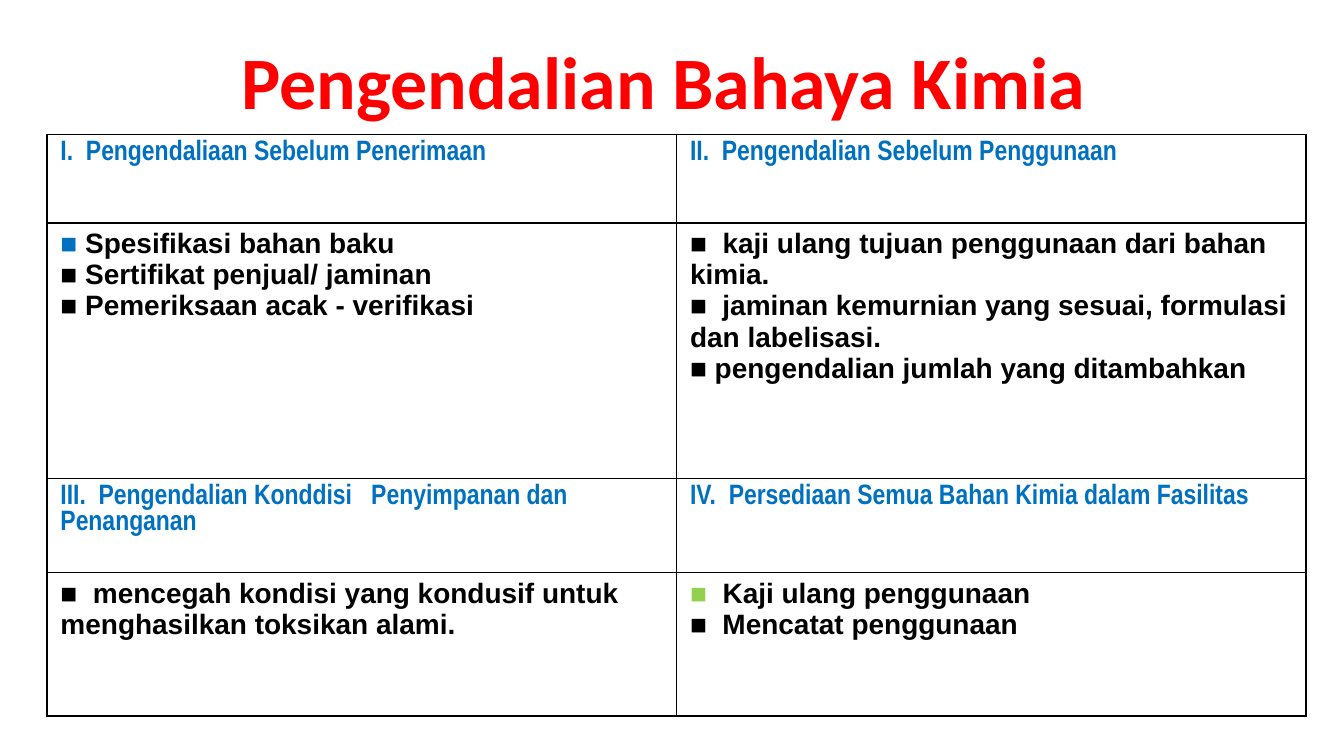
from lxml import etree
from pptx import Presentation
from pptx.dml.color import RGBColor
from pptx.enum.text import MSO_ANCHOR, PP_ALIGN
from pptx.oxml.ns import qn
from pptx.util import Inches, Pt

CENTER, JUSTIFY, LEFT = PP_ALIGN.CENTER, PP_ALIGN.JUSTIFY, PP_ALIGN.LEFT
MIDDLE, TOP = MSO_ANCHOR.MIDDLE, MSO_ANCHOR.TOP
TITLE_ONLY = 5
SLIDE_WIDTH = 10
SLIDE_HEIGHT = SLIDE_WIDTH * 9 / 16
BLACK, BLUE, GREEN, RED = "000000", "0070C0", "92D050", "FF0000"


def color(value):
    return RGBColor.from_string(value)


def add_text(paragraph, text, size=15, font="Arial", fill=BLACK, bold=True, align=LEFT):
    paragraph.alignment = align
    run = paragraph.add_run()
    run.text = text
    run.font.size = Pt(size)
    run.font.name = font
    run.font.bold = bold
    run.font.color.rgb = color(fill)


class ControlSlide:
    heading_style = {"font": "Arial Narrow", "fill": BLUE}
    border_color = BLACK
    border_width = Pt(1)

    def __init__(self, presentation):
        self.slide = presentation.slides.add_slide(presentation.slide_layouts[TITLE_ONLY])

    def title(self, text, left, top, width, height):
        heading = self.slide.shapes.title
        heading.left, heading.top = Inches(left), Inches(top)
        heading.width, heading.height = Inches(width), Inches(height)
        frame = heading.text_frame
        frame.word_wrap = True
        frame.vertical_anchor = MIDDLE
        add_text(frame.paragraphs[0], text, size=39.6, font="Calibri", fill=RED, align=CENTER)

    def table(self, left, top, width, row_heights):
        grid = self.slide.shapes.add_table(
            len(row_heights), 2, Inches(left), Inches(top),
            Inches(width), Inches(sum(row_heights))).table
        grid.first_row = grid.horz_banding = False
        for row, height in zip(grid.rows, row_heights):
            row.height = Inches(height)
            for cell in row.cells:
                self.plain_cell(cell)
        return grid

    def plain_cell(self, cell):
        cell.margin_left = cell.margin_right = Inches(0.1)
        cell.margin_top = cell.margin_bottom = Inches(0.04)
        cell.vertical_anchor = TOP
        properties = cell._tc.get_or_add_tcPr()
        for side in ("a:lnL", "a:lnR", "a:lnT", "a:lnB"):
            line = etree.SubElement(properties, qn(side), w=str(self.border_width))
            fill = etree.SubElement(line, qn("a:solidFill"))
            etree.SubElement(fill, qn("a:srgbClr"), val=self.border_color)
        cell.fill.background()

    def heading(self, cell, text, align):
        add_text(cell.text_frame.paragraphs[0], text, align=align, **self.heading_style)

    def measures(self, cell, items, first_mark, align):
        frame = cell.text_frame
        for index, (mark, text) in enumerate(items):
            first = index == 0
            paragraph = frame.paragraphs[0] if first else frame.add_paragraph()
            add_text(paragraph, mark, fill=first_mark if first else BLACK,
                     bold=not first, align=align)
            add_text(paragraph, text, align=align)


SECTIONS = [
    ("I.  Pengendaliaan Sebelum Penerimaan", JUSTIFY, BLUE, JUSTIFY, [
        ("■ ", "Spesifikasi bahan baku"),
        ("■ ", "Sertifikat penjual/ jaminan"),
        ("■ ", "Pemeriksaan acak - verifikasi")]),
    ("II.  Pengendalian Sebelum Penggunaan", JUSTIFY, BLACK, LEFT, [
        ("■  ", "kaji ulang tujuan penggunaan dari bahan kimia."),
        ("■  ", "jaminan kemurnian yang sesuai, formulasi dan labelisasi."),
        ("■ ", "pengendalian jumlah yang ditambahkan")]),
    ("III.  Pengendalian Konddisi   Penyimpanan dan Penanganan", LEFT, BLACK, LEFT, [
        ("■  ", "mencegah kondisi yang kondusif untuk menghasilkan toksikan alami.")]),
    ("IV.  Persediaan Semua Bahan Kimia dalam Fasilitas", LEFT, GREEN, JUSTIFY, [
        ("■  ", "Kaji ulang penggunaan"),
        ("■  ", "Mencatat penggunaan")]),
]


def main():
    presentation = Presentation()
    presentation.slide_width = Inches(SLIDE_WIDTH)
    presentation.slide_height = Inches(SLIDE_HEIGHT)
    page = ControlSlide(presentation)
    page.title("Pengendalian Bahaya Kimia ", 0.75, 0.27, 8.5, 0.65)
    controls = page.table(0.35, 1, 9.37, [0.66, 1.9, 0.7, 1.07])
    for index, (heading, heading_align, mark, align, items) in enumerate(SECTIONS):
        pair, column = divmod(index, 2)
        page.heading(controls.cell(2 * pair, column), heading, heading_align)
        page.measures(controls.cell(2 * pair + 1, column), items, mark, align)
    presentation.save("out.pptx")


if __name__ == "__main__":
    main()
